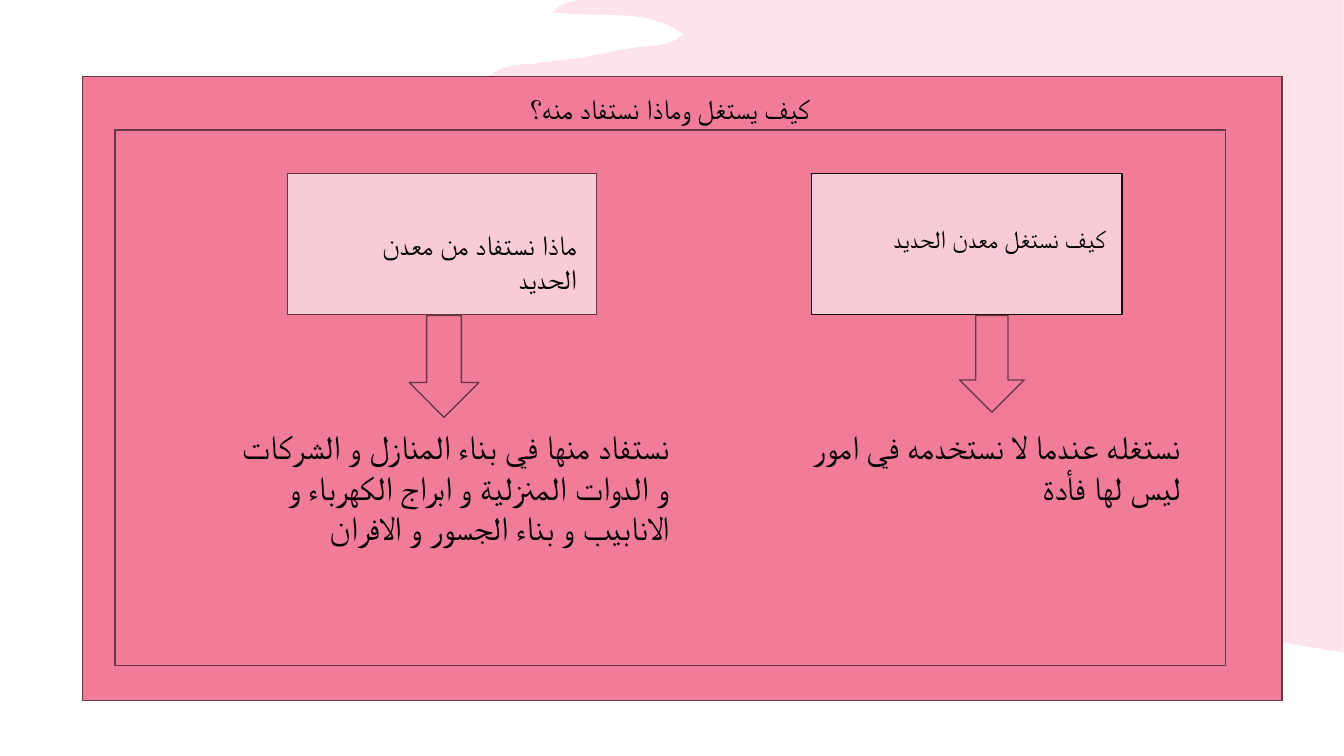
"""Build a slide on how iron is exploited and what we gain from it."""
from lxml import etree
from pptx import Presentation
from pptx.dml.color import RGBColor
from pptx.enum import shapes, text
from pptx.oxml import ns
from pptx import util as u

FONT = "League Spartan"
COLORS = {"pink": "F07C98", "pale": "F9CBD6", "edge": "693643",
          "dark": "0D0D0D", "black": "000000"}
INCH = 2.54
NBSP = chr(160)

TITLE = (f"كيف{NBSP}يستغل{NBSP}وماذا نستفاد منه؟", (1.23, 0.86, 10.83, 0.44), 20)
FRAMES = [(0.82, 0.76, 11.9, 6.19), (1.14, 1.29, 11.02, 5.31)]
COLUMNS = [
    {"box": (8.05, 1.72, 3.08, 1.4), "edge": "dark",
     "question": ("كيف نستغل معدن الحديد", (8.19, 2.17, 2.88, 0.4), 18),
     "arrow": (9.52, 3.13, 0.64, 0.96),
     "answer": ("نستغله عندما لا نستخدمه في امور ليس لها فأدة",
                (7.81, 4.18, 4, 0.91), 24)},
    {"box": (2.85, 1.72, 3.07, 1.4), "edge": "edge",
     "question": ("ماذا نستفاد من معدن الحديد", (3.1, 2.21, 2.72, 0.44), 20),
     "arrow": (4.06, 3.13, 0.69, 1.01),
     "answer": (f"نستفاد{NBSP}منها في بناء المنازل و الشركات و الدوات المنزلية "
                "و ابراج الكهرباء و الانابيب و بناء الجسور و الافران",
                (2.14, 4.18, 4.6, 1.31), 24)},
]

SPLASH_LEFT = 1.93
SPLASH_TOP_EDGE = [(13.33, 0), (5.75, 0)]
SPLASH_CURVES = [
    (5.67, 0.01, 5.57, 0.03, 5.48, 0.12), (5.95, 0.19, 6.39, 0.06, 6.78, 0.34),
    (6.64, 0.47, 6.48, 0.44, 6.32, 0.47), (6.16, 0.49, 6, 0.53, 5.84, 0.56),
    (5.67, 0.59, 5.49, 0.6, 5.32, 0.63), (5.18, 0.65, 5.02, 0.61, 4.85, 0.77),
    (5.27, 0.88, 5.66, 0.71, 6.08, 0.82), (5.84, 0.92, 5.63, 0.89, 5.44, 0.95),
    (5.27, 1, 5.06, 0.94, 4.92, 1.11), (4.81, 1.24, 4.69, 1.26, 4.55, 1.18),
    (4.42, 1.11, 4.28, 1.13, 4.15, 1.2), (4.11, 1.23, 4.06, 1.26, 4.06, 1.32),
    (4.06, 1.41, 4.12, 1.43, 4.18, 1.44), (4.24, 1.46, 4.31, 1.47, 4.37, 1.46),
    (4.74, 1.39, 5.1, 1.5, 5.47, 1.49), (4.31, 1.76, 3.14, 1.67, 1.93, 1.76),
    (2.09, 1.95, 2.29, 1.79, 2.41, 1.93), (2.3, 2.22, 2.34, 2.37, 2.58, 2.39),
    (2.8, 2.41, 3.04, 2.31, 3.16, 2.65), (3.2, 2.76, 3.41, 2.73, 3.55, 2.75),
    (3.84, 2.79, 4.14, 2.75, 4.42, 2.88), (4.53, 2.93, 4.6, 2.97, 4.55, 3.11),
    (4.49, 3.25, 4.56, 3.3, 4.66, 3.36), (4.73, 3.4, 4.83, 3.39, 4.89, 3.52),
    (4.28, 3.5, 3.69, 3.4, 3.09, 3.5), (3.75, 3.74, 4.47, 3.73, 5.12, 4.02),
    (5.1, 4.12, 4.95, 4.07, 4.94, 4.22), (5.28, 4.38, 5.69, 4.27, 6.05, 4.5),
    (5.84, 4.61, 5.65, 4.44, 5.45, 4.54), (5.52, 4.69, 8.4, 5.61, 8.92, 5.71),
    (9.78, 5.87, 11.95, 6.25, 13.18, 6.45),
]
SPLASH_CORNER = (13.33, 6.47)


def cm(inches):
    return u.Cm(inches * INCH)


def rgb(name):
    return RGBColor.from_string(COLORS[name])


def add_splash(slide):
    knots = SPLASH_TOP_EDGE + [c[4:] for c in SPLASH_CURVES] + [SPLASH_CORNER]
    knots = [(cm(x), cm(y)) for x, y in knots]
    builder = slide.shapes.build_freeform(*knots[0])
    builder.add_line_segments(knots[1:])
    sp = builder.convert_to_shape()
    sp.shadow.inherit = False
    sp.fill.solid()
    sp.fill.fore_color.rgb = rgb("pink")
    sp.line.fill.background()
    color = sp._element.spPr.find(".//" + ns.qn("a:srgbClr"))
    etree.SubElement(color, ns.qn("a:alpha"), val="20000")
    segments = sp._element.spPr.findall(".//" + ns.qn("a:lnTo"))[1:]
    for segment, curve in zip(segments, SPLASH_CURVES):
        bend = etree.Element(ns.qn("a:cubicBezTo"))
        for x, y in zip(curve[::2], curve[1::2]):
            etree.SubElement(bend, ns.qn("a:pt"),
                             x=str(cm(x - SPLASH_LEFT)), y=str(cm(y)))
        segment.getparent().replace(segment, bend)


def add_block(slide, kind, place, fill="pink", edge="edge"):
    sp = slide.shapes.add_shape(kind, *map(cm, place))
    sp.shadow.inherit = False
    sp.fill.solid()
    sp.fill.fore_color.rgb = rgb(fill)
    sp.line.color.rgb = rgb(edge)
    sp.line.width = u.Pt(1)


def add_label(slide, words, place, size, align=text.PP_ALIGN.RIGHT):
    tf = slide.shapes.add_textbox(*map(cm, place)).text_frame
    tf.word_wrap = True
    tf.auto_size = text.MSO_AUTO_SIZE.SHAPE_TO_FIT_TEXT
    p = tf.paragraphs[0]
    p.alignment = align
    p._p.get_or_add_pPr().set("rtl", "1")
    r = p.add_run()
    r.text = words
    r.font.name = FONT
    r.font.size = u.Pt(size)
    r.font.color.rgb = rgb("black")
    etree.SubElement(r._r.get_or_add_rPr(), ns.qn("a:cs"), typeface=FONT)


def main():
    prs = Presentation()
    prs.slide_width, prs.slide_height = cm(13.333), cm(7.5)
    slide = prs.slides.add_slide(prs.slide_layouts[6])
    rect, arrow = shapes.MSO_SHAPE.RECTANGLE, shapes.MSO_SHAPE.DOWN_ARROW
    add_splash(slide)
    for frame in FRAMES:
        add_block(slide, rect, frame)
    add_label(slide, *TITLE, align=text.PP_ALIGN.CENTER)
    for column in COLUMNS:
        add_block(slide, rect, column["box"], "pale", column["edge"])
        add_label(slide, *column["question"])
        add_block(slide, arrow, column["arrow"])
        add_label(slide, *column["answer"])
    prs.save("out.pptx")


if __name__ == "__main__":
    main()
